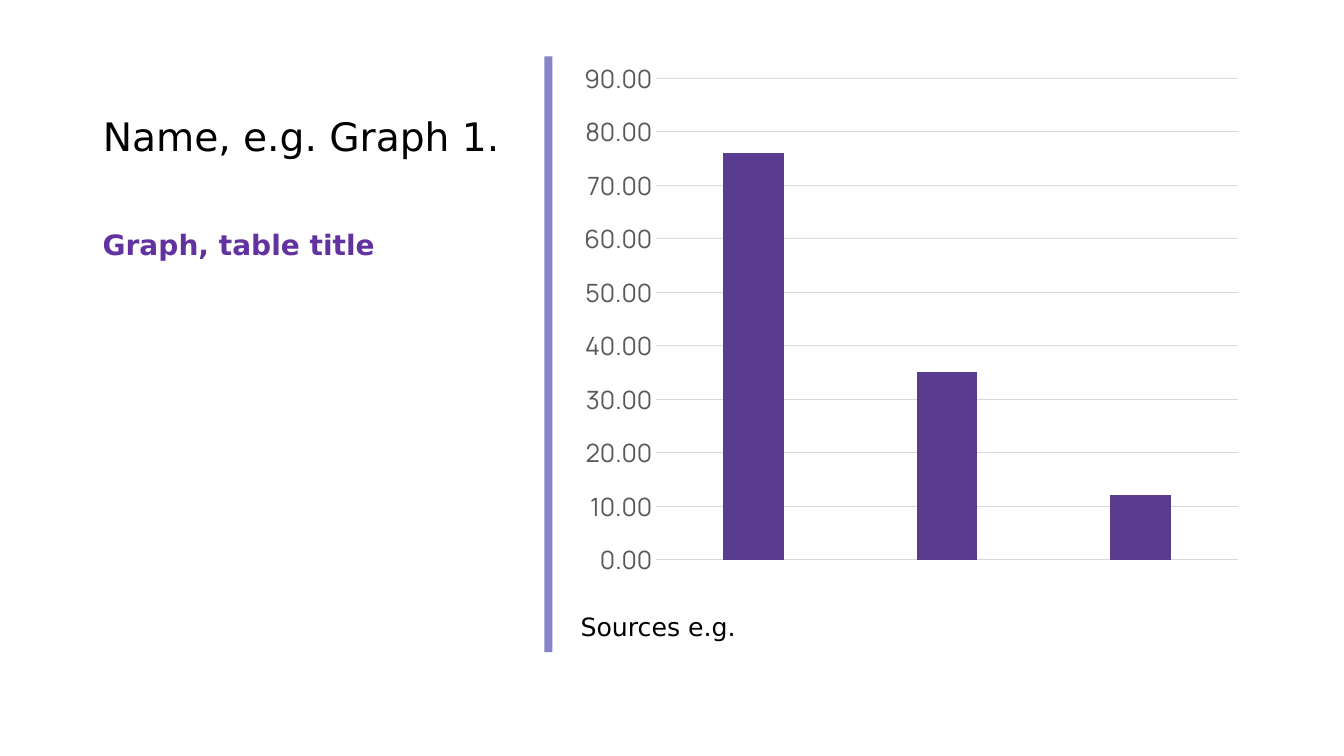
from pptx import Presentation
from pptx.chart.data import CategoryChartData
from pptx.dml.color import RGBColor
from pptx.enum.chart import XL_CHART_TYPE, XL_TICK_MARK
from pptx.enum.shapes import MSO_SHAPE
from pptx.enum.text import MSO_ANCHOR, MSO_AUTO_SIZE, PP_ALIGN
from pptx.util import Inches, Pt

BLACK = RGBColor(0x00, 0x00, 0x00)
GRAY = RGBColor(0x59, 0x59, 0x59)
GRID = RGBColor(0xD9, 0xD9, 0xD9)
LILAC = RGBColor(0x87, 0x84, 0xC7)
VIOLET = RGBColor(0x61, 0x32, 0xA0)
PURPLE = RGBColor(0x59, 0x3C, 0x8F)


def write(frame, text, size=18, color=BLACK, bold=False, font="DejaVu Sans",
          anchor=MSO_ANCHOR.TOP):
    """Fill a text frame with one formatted paragraph."""
    frame.word_wrap = True
    frame.auto_size = MSO_AUTO_SIZE.NONE
    frame.vertical_anchor = anchor
    para = frame.paragraphs[0]
    para.alignment = PP_ALIGN.LEFT
    para.line_spacing = 0.9
    run = para.add_run()
    run.text = text
    run.font.name = font
    run.font.size = Pt(size)
    run.font.bold = bold
    run.font.color.rgb = color


class Page:
    """Hold the chart style and the current slide."""

    font = "Manrope"
    size = Pt(18)

    def __init__(self, deck):
        """Add a title-only slide."""
        self.slide = deck.slides.add_slide(deck.slide_layouts[5])
        self.shapes = self.slide.shapes

    def title(self, text, box, **style):
        """Place and format the title."""
        head = self.shapes.title
        head.left, head.top, head.width, head.height = map(Inches, box)
        write(head.text_frame, text, **style)

    def text(self, text, box, **style):
        """Add a text box."""
        write(self.shapes.add_textbox(*map(Inches, box)).text_frame, text, **style)

    def bar(self, box, color):
        """Add a plain filled bar."""
        shape = self.shapes.add_shape(MSO_SHAPE.RECTANGLE, *map(Inches, box))
        shape.shadow.inherit = False
        shape.fill.solid()
        shape.fill.fore_color.rgb = color
        shape.line.fill.background()

    def chart(self, box, names, values, color):
        """Add a column chart with a value axis and grid lines."""
        data = CategoryChartData(number_format="0.00")
        data.categories = names
        data.add_series("Series 1", values)
        kind = XL_CHART_TYPE.COLUMN_CLUSTERED
        chart = self.shapes.add_chart(kind, *map(Inches, box), data).chart
        chart.has_legend = False
        chart.has_title = False
        chart.font.name = self.font
        chart.font.size = self.size
        chart.font.color.rgb = BLACK
        chart.category_axis.visible = False
        axis = chart.value_axis
        axis.minimum_scale, axis.maximum_scale, axis.major_unit = 0, 90, 10
        axis.major_tick_mark = axis.minor_tick_mark = XL_TICK_MARK.NONE
        axis.format.line.fill.background()
        grid = axis.major_gridlines.format.line
        grid.width = Pt(0.75)
        grid.color.rgb = GRID
        labels = axis.tick_labels
        labels.number_format = "0.00"
        labels.number_format_is_linked = False
        labels.font.name = self.font
        labels.font.size = self.size
        labels.font.color.rgb = GRAY
        plot = chart.plots[0]
        plot.vary_by_categories = False
        plot.gap_width, plot.overlap = 219, -27
        fill = plot.series[0].format.fill
        fill.solid()
        fill.fore_color.rgb = color


def main():
    """Build and save the slide."""
    deck = Presentation()
    deck.slide_width, deck.slide_height = Inches(13.33), Inches(7.5)
    page = Page(deck)
    page.bar((5.4, 0.56, 0.08, 5.91), LILAC)
    page.title("Name, e.g. Graph 1.", (0.92, 0.5, 4.3, 1.75), size=28,
               anchor=MSO_ANCHOR.MIDDLE)
    page.chart((5.66, 0.5, 6.75, 5.33), ("1", "2", "3"), (76, 35, 12), PURPLE)
    page.text("Graph, table title", (0.92, 2.25, 4.3, 4.17), size=20,
              color=VIOLET, bold=True)
    page.text("Sources e.g.", (5.66, 6.05, 6.6, 0.42))
    deck.save("out.pptx")


if __name__ == "__main__":
    main()
